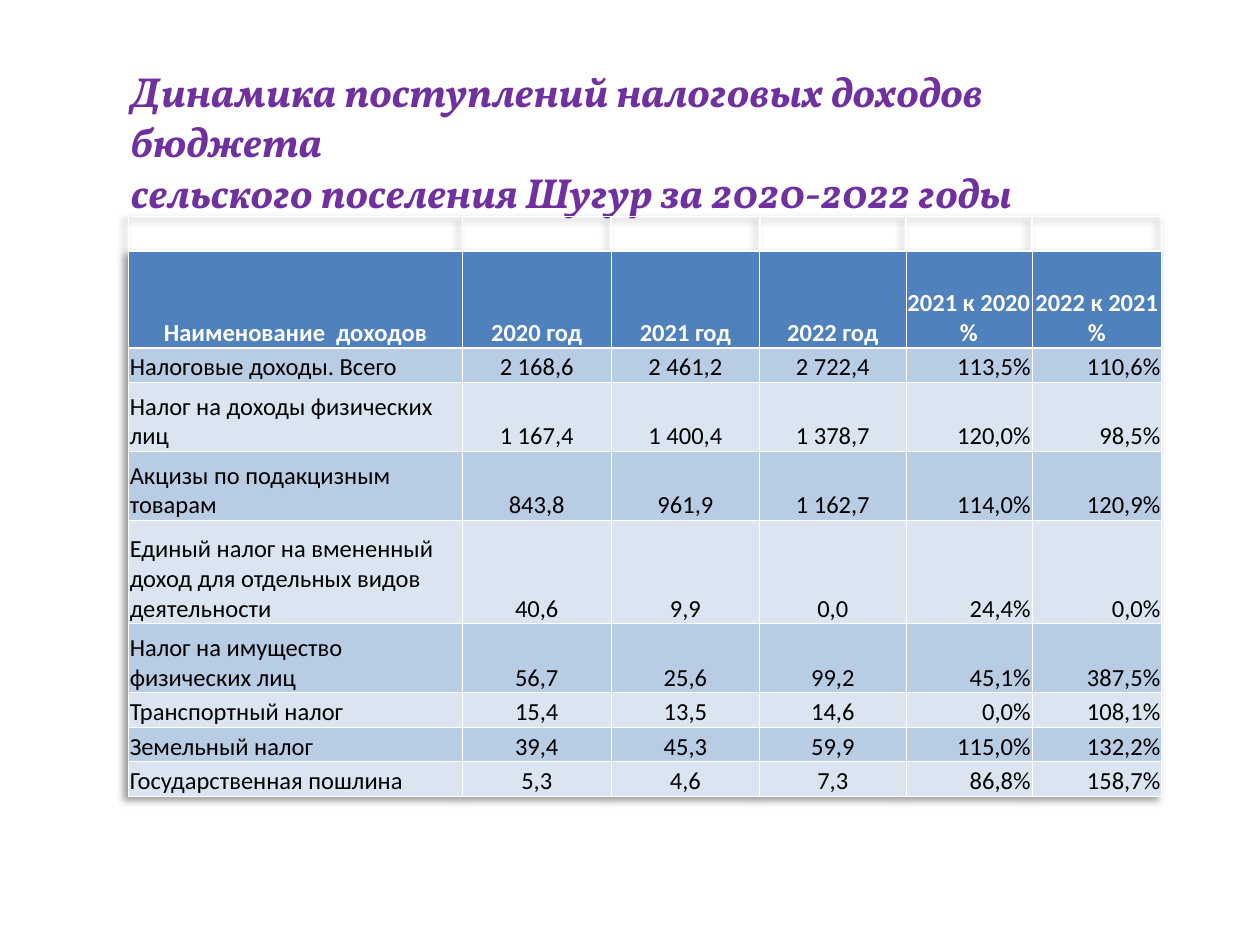
from lxml.etree import SubElement
from pptx import Presentation
from pptx.dml.color import RGBColor
from pptx.enum.text import MSO_ANCHOR as ANCHOR, PP_ALIGN as ALIGN
from pptx.oxml import parse_xml
from pptx.oxml.ns import nsdecls, qn
from pptx.util import Inches, Pt

COLORS = {
    "title": "7030A0", "header": "4F81BD", "odd": "B8CCE4",
    "even": "DBE5F1", "line": "FFFFFF", "text": "000000",
}

prs = Presentation()
prs.slide_width, prs.slide_height = Inches(10), Inches(7.5)
U = prs.slide_width // 1000  # the slide is a grid of 1000 x 750 units
s = prs.slides.add_slide(prs.slide_layouts[6])


def write(p, text, size=14, font="Calibri", color="text", bold=False,
          italic=False, align=ALIGN.LEFT):
    p.alignment = align
    r = p.add_run()
    r.text = text
    f = r.font
    f.size, f.name, f.bold, f.italic = Pt(size), font, bold, italic
    f.color.rgb = RGBColor.from_string(COLORS[color])


def border(cell, side, width):
    ln = parse_xml(
        f'<a:{side} {nsdecls("a")} w="{Pt(width)}"><a:solidFill>'
        f'<a:srgbClr val="{COLORS["line"]}"/></a:solidFill></a:{side}>')
    tcPr = cell._tc.get_or_add_tcPr()
    fill = tcPr.find(qn("a:solidFill"))
    fill.addprevious(ln)  # borders stand before the fill


# Title
tf = s.shapes.add_textbox(94 * U, 47 * U, 828 * U, 91 * U).text_frame
tf.word_wrap = True
title = ["Динамика поступлений налоговых доходов бюджета",
         "сельского поселения Шугур за 2020-2022 годы"]
for i, line in enumerate(title):
    p = tf.add_paragraph() if i else tf.paragraphs[0]
    write(p, line, size=24, font="Vollkorn", color="title", bold=True, italic=True)

# Table data: the top row is empty and unfilled
rows = [
    [""] * 6,
    ["Наименование  доходов", "2020 год", "2021 год", "2022 год",
     "2021 к 2020 %", "2022 к 2021 %"],
    ["Налоговые доходы. Всего", "2 168,6", "2 461,2", "2 722,4", "113,5%", "110,6%"],
    ["Налог на доходы физических лиц", "1 167,4", "1 400,4", "1 378,7", "120,0%", "98,5%"],
    ["Акцизы по подакцизным товарам", "843,8", "961,9", "1 162,7", "114,0%", "120,9%"],
    ["Единый налог на вмененный доход для отдельных видов деятельности",
     "40,6", "9,9", "0,0", "24,4%", "0,0%"],
    ["Налог на имущество физических лиц", "56,7", "25,6", "99,2", "45,1%", "387,5%"],
    ["Транспортный налог", "15,4", "13,5", "14,6", "0,0%", "108,1%"],
    ["Земельный налог", "39,4", "45,3", "59,9", "115,0%", "132,2%"],
    ["Государственная пошлина", "5,3", "4,6", "7,3", "86,8%", "158,7%"],
]
widths = [265, 118, 118, 116, 100, 103]
line_h = 27.4
heights = [line_h * n for n in (1, 2.8, 1, 2, 2, 3, 2, 1, 1, 1)]
aligns = [ALIGN.LEFT] + [ALIGN.CENTER] * 3 + [ALIGN.RIGHT] * 2

# Table grid
table = s.shapes.add_table(len(rows), len(widths), 102 * U, 172 * U,
                           sum(widths) * U, int(sum(heights) * U)).table
table.horz_banding = False
for col, w in zip(table.columns, widths):
    col.width = w * U
for row, h in zip(table.rows, heights):
    row.height = int(h * U)

# Soft shadow to the lower left
table._tbl.tblPr.insert(0, parse_xml(
    f'<a:effectLst {nsdecls("a")}><a:outerShdw blurRad="{Pt(4)}" dist="{Pt(3)}" '
    'dir="8100000" algn="tr" rotWithShape="0"><a:srgbClr val="000000">'
    '<a:alpha val="40000"/></a:srgbClr></a:outerShdw></a:effectLst>'))

# Cells
for i, values in enumerate(rows):
    for j, value in enumerate(values):
        cell = table.cell(i, j)
        cell.vertical_anchor = ANCHOR.BOTTOM
        cell.margin_left = cell.margin_right = cell.margin_top = U
        cell.margin_bottom = 0
        p = cell.text_frame.paragraphs[0]
        if i == 0:
            cell.fill.background()
            SubElement(p._p, qn("a:endParaRPr"), sz="1400")
            continue
        header = i == 1
        fill = "header" if header else "even" if i % 2 else "odd"
        cell.fill.solid()
        cell.fill.fore_color.rgb = RGBColor.from_string(COLORS[fill])
        write(p, value, color="line" if header else "text", bold=header,
              align=ALIGN.CENTER if header else aligns[j])
        if j > 0:
            border(cell, "lnL", 0.5)
        if j < len(widths) - 1:
            border(cell, "lnR", 0.5)
        if not header:
            border(cell, "lnT", 1.5 if i == 2 else 0.5)
        if i < len(rows) - 1:
            border(cell, "lnB", 1.5 if header else 0.5)

prs.save("out.pptx")
